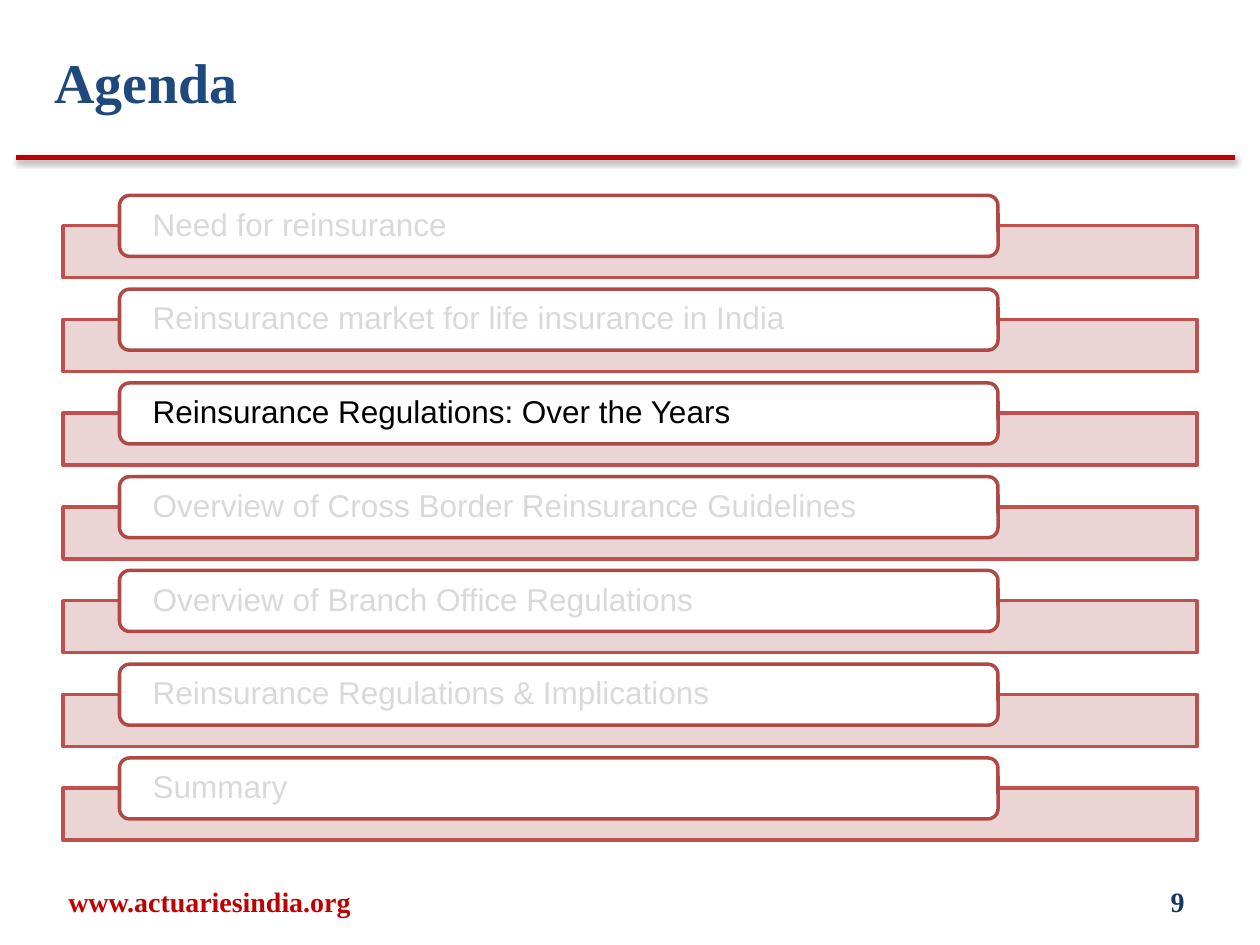
import pptx
import pptx.dml.color
import pptx.enum.shapes
import pptx.enum.text
import pptx.oxml
import pptx.oxml.ns
import pptx.util
from lxml import etree

Cm = pptx.util.Cm
Pt = pptx.util.Pt
Shape = pptx.enum.shapes.MSO_SHAPE
Align = pptx.enum.text.PP_ALIGN
Anchor = pptx.enum.text.MSO_ANCHOR

# Content
TITLE = "Agenda"
SITE = "www.actuariesindia.org"
PAGE = "9"
ITEMS = [
    "Need for reinsurance",
    "Reinsurance market for life insurance in India",
    "Reinsurance Regulations: Over the Years",
    "Overview of Cross Border Reinsurance Guidelines",
    "Overview of Branch Office Regulations",
    "Reinsurance Regulations & Implications",
    "Summary",
]
ACTIVE = 2

COLORS = {
    "title": "1F497D", "red": "C00000", "page": "17375E",
    "bar": "E8D0D0", "edge": "C0504D", "card": "FFFFFF", "rim": "AE4946",
    "dim": "D9D9D9", "live": "000000", "shade": "000000",
}
SERIF = "Times New Roman"
SANS = "Arial"

# Layout in centimetres
BAR = {"left": 1.27, "top": 4.55, "width": 22.86, "height": 1.05}
CARD = {"left": 2.41, "top": 3.94, "width": 17.71, "height": 1.23}
STEP = 1.89
INSET = 0.61


def color(name):
    return pptx.dml.color.RGBColor.from_string(COLORS[name])


def write(shape, text, font=SERIF, size=16, ink="live", bold=False,
          align=Align.LEFT, anchor=Anchor.MIDDLE, line=1.0, inset=None):
    frame = shape.text_frame
    frame.word_wrap = True
    frame.vertical_anchor = anchor
    if inset is not None:
        frame.margin_left = frame.margin_right = Cm(inset)
        frame.margin_top = frame.margin_bottom = 0
    para = frame.paragraphs[0]
    para.alignment = align
    para.line_spacing = line
    run = para.add_run()
    run.text = text
    run.font.name = font
    run.font.size = Pt(size)
    run.font.bold = bold
    run.font.color.rgb = color(ink)


def label(slide, box, text, **form):
    write(slide.shapes.add_textbox(*map(Cm, box)), text, **form)


def block(slide, kind, place, drop, fill, edge):
    shape = slide.shapes.add_shape(
        kind, Cm(place["left"]), Cm(place["top"] + drop),
        Cm(place["width"]), Cm(place["height"]))
    shape.shadow.inherit = False
    shape.fill.solid()
    shape.fill.fore_color.rgb = color(fill)
    shape.line.color.rgb = color(edge)
    shape.line.width = Pt(2)
    return shape


def fade(shape, share):
    tone = shape.fill._xPr.find(".//" + pptx.oxml.ns.qn("a:srgbClr"))
    etree.SubElement(tone, pptx.oxml.ns.qn("a:alpha"), val=str(share * 1000))


def rule(slide):
    line = slide.shapes.add_connector(
        pptx.enum.shapes.MSO_CONNECTOR.STRAIGHT,
        Cm(0.33), Cm(3.17), Cm(24.9), Cm(3.17))
    line.line.color.rgb = color("red")
    line.line.width = Pt(3)
    line._element.spPr.append(pptx.oxml.parse_xml(
        f'<a:effectLst {pptx.oxml.ns.nsdecls("a")}>'
        f'<a:outerShdw blurRad="{Pt(3.1)}" dist="{Pt(1.6)}" dir="5400000" '
        'rotWithShape="0">'
        f'<a:srgbClr val="{COLORS["shade"]}"><a:alpha val="38000"/></a:srgbClr>'
        '</a:outerShdw></a:effectLst>'))


def main():
    deck = pptx.Presentation()
    deck.slide_width, deck.slide_height = Cm(25.4), Cm(19.05)
    slide = deck.slides.add_slide(deck.slide_layouts[6])

    # Header and footer
    rule(slide)
    label(slide, (0.2, 17.65, 8.05, 1.02), SITE, ink="red", bold=True,
          align=Align.CENTER)
    label(slide, (18.21, 17.65, 5.92, 1.02), PAGE, ink="page", bold=True,
          align=Align.RIGHT)
    label(slide, (0.84, 0.84, 16.94, 1.7), TITLE, size=32, ink="title",
          bold=True, anchor=Anchor.TOP)

    # Agenda rows: a bar with a card over it
    for row, item in enumerate(ITEMS):
        drop = row * STEP
        fade(block(slide, Shape.RECTANGLE, BAR, drop, "bar", "edge"), 90)
        card = block(slide, Shape.ROUNDED_RECTANGLE, CARD, drop, "card", "rim")
        write(card, item, font=SANS, size=18, line=0.9, inset=INSET,
              ink="live" if row == ACTIVE else "dim")

    deck.save("out.pptx")


if __name__ == "__main__":
    main()
